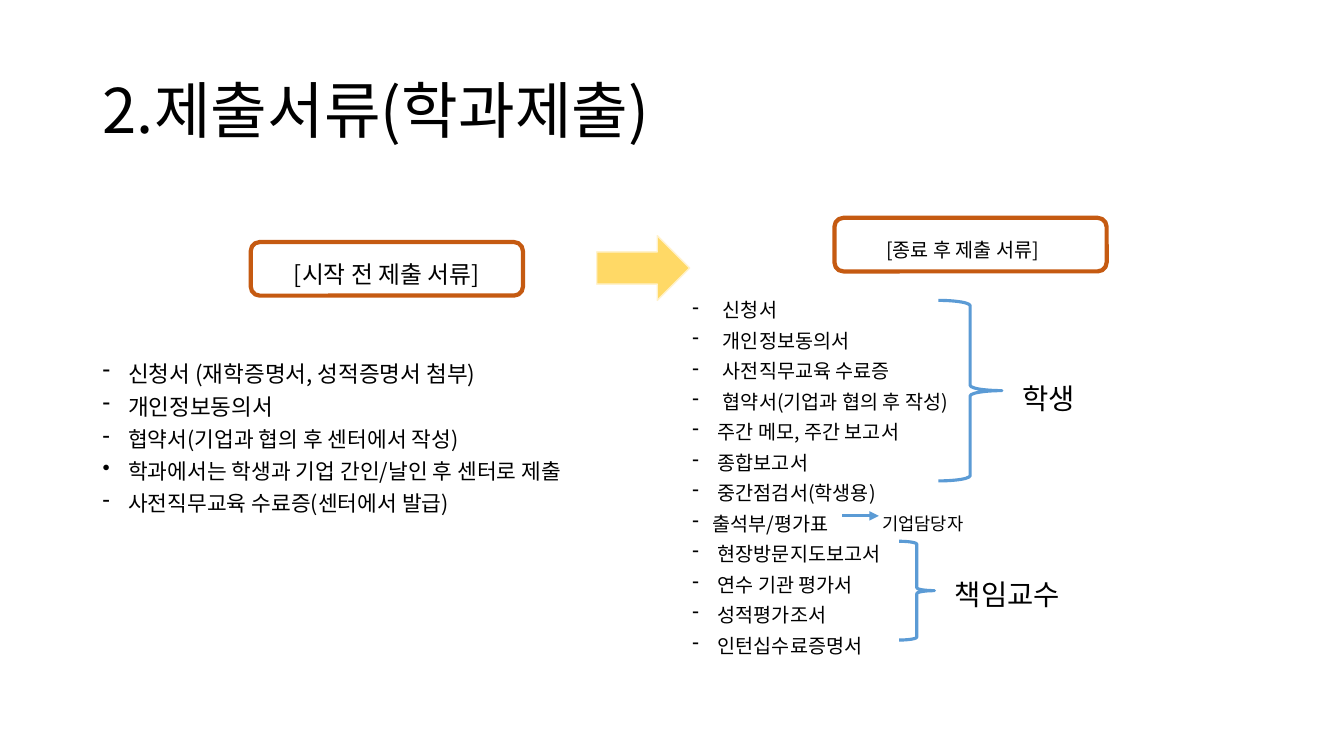
from lxml.etree import SubElement
from pptx import Presentation
from pptx.dml.color import RGBColor
from pptx.enum.shapes import MSO_CONNECTOR, MSO_SHAPE
from pptx.enum.text import MSO_ANCHOR, PP_ALIGN
from pptx.oxml.ns import qn
from pptx.util import Cm, Pt

FONT = "Noto Sans CJK KR"
BLACK = RGBColor(0x00, 0x00, 0x00)
ORANGE = RGBColor(0xC5, 0x5A, 0x11)
BLUE = RGBColor(0x5B, 0x9B, 0xD5)
YELLOW = RGBColor(0xFF, 0xD9, 0x66)
CREAM = RGBColor(0xFF, 0xF2, 0xCC)


def write(frame, text, size, first=True, bullet=None, indent=0.64, align=PP_ALIGN.LEFT,
          spacing=1.0, before=0, anchor=MSO_ANCHOR.MIDDLE, insets=(0, 0, 0, 0)):
    """Put one formatted paragraph in a text frame; indent is in cm, insets run left to bottom."""
    frame.word_wrap = True
    frame.vertical_anchor = anchor
    frame.margin_left, frame.margin_top, frame.margin_right, frame.margin_bottom = map(Cm, insets)
    paragraph = frame.paragraphs[0] if first else frame.add_paragraph()
    if bullet:
        properties = paragraph._p.get_or_add_pPr()
        properties.set("marL", str(Cm(indent)))
        properties.set("indent", str(-Cm(indent)))
        SubElement(properties, qn("a:buFontTx"))
        SubElement(properties, qn("a:buChar")).set("char", bullet)
    paragraph.alignment = align
    paragraph.line_spacing = spacing
    paragraph.space_before = Pt(0 if first else before)
    run = paragraph.add_run()
    run.text = text
    run.font.size = Pt(size)
    run.font.color.rgb = BLACK
    run.font.name = FONT
    SubElement(run.font._element, qn("a:ea")).set("typeface", FONT)


def add_outline(kind, left, top, width, height, color, weight, fill=None):
    shape = slide.shapes.add_shape(kind, Cm(left), Cm(top), Cm(width), Cm(height))
    shape.shadow.inherit = False
    if fill is None:
        shape.fill.background()
    else:
        shape.fill.solid()
        shape.fill.fore_color.rgb = fill
    shape.line.color.rgb = color
    shape.line.width = Pt(weight)
    return shape


presentation = Presentation()
presentation.slide_width = Cm(33.87)
presentation.slide_height = Cm(19.05)
slide = presentation.slides.add_slide(presentation.slide_layouts[5])

title = slide.shapes.title
title.left, title.top, title.width, title.height = Cm(2.34), Cm(1.02), Cm(29.21), Cm(3.68)
write(title.text_frame, "2.제출서류(학과제출)", 44, spacing=0.9, insets=(0.25, 0.13, 0.25, 0.13))

# Document lists: text, size, bullet, indent
before_start = [
    ("신청서 (재학증명서, 성적증명서 첨부)", 16.1, "-", 0.64),
    ("개인정보동의서", 16.1, "-", 0.64),
    ("협약서(기업과 협의 후 센터에서 작성)", 15.3, "-", 0.64),
    ("학과에서는 학생과 기업 간인/날인 후 센터로 제출", 15.3, "•", 0.64),
    ("사전직무교육 수료증(센터에서 발급)", 15.3, "-", 0.64),
]
after_end = [
    ("신청서", 14, "-", 0.77),
    ("개인정보동의서", 14, "-", 0.77),
    ("사전직무교육 수료증", 14, "-", 0.77),
    ("협약서(기업과 협의 후 작성)", 14, "-", 0.77),
    ("주간 메모, 주간 보고서", 14, "-", 0.64),
    ("종합보고서", 14, "-", 0.64),
    ("중간점검서(학생용)", 14, "-", 0.64),
    ("출석부/평가표", 14, "-", 0.5),
    ("현장방문지도보고서", 14, "-", 0.64),
    ("연수 기관 평가서", 14, "-", 0.64),
    ("성적평가조서", 14, "-", 0.64),
    ("인턴십수료증명서", 14, "-", 0.64),
]
for documents, left, top, width, height in [
    (before_start, 2.59, 9.25, 14.3, 4.2),
    (after_end, 17.45, 7.68, 13.8, 9.3),
]:
    box = slide.shapes.add_textbox(Cm(left), Cm(top), Cm(width), Cm(height))
    for number, (text, size, bullet, indent) in enumerate(documents):
        write(box.text_frame, text, size, first=number == 0, bullet=bullet, indent=indent,
              spacing=0.7, before=10, anchor=MSO_ANCHOR.TOP)

# Headings and the step arrow between them
for text, size, left, top, right_inset in [
    ("[시작 전 제출 서류]", 17, 6.32, 6.1, 0),
    ("[종료 후 제출 서류]", 14, 21.03, 5.49, 0.4),
]:
    heading = add_outline(MSO_SHAPE.ROUNDED_RECTANGLE, left, top, 6.86, 1.35, ORANGE, 3)
    write(heading.text_frame, text, size, align=PP_ALIGN.CENTER, insets=(0, 0.26, right_inset, 0))
add_outline(MSO_SHAPE.RIGHT_ARROW, 15.04, 5.94, 2.34, 1.63, CREAM, 1, fill=YELLOW)

# Who submits what
add_outline(MSO_SHAPE.RIGHT_BRACE, 23.65, 7.57, 1.6, 4.55, BLUE, 2.25)
add_outline(MSO_SHAPE.RIGHT_BRACE, 22.66, 13.64, 0.89, 2.49, BLUE, 2.25)
for text, size, left, top, width, height, align in [
    ("학생", 20.4, 23.77, 9.52, 5.31, 1.04, PP_ALIGN.CENTER),
    ("책임교수", 20.4, 22.73, 14.46, 5.31, 1.04, PP_ALIGN.CENTER),
    ("기업담당자", 12.6, 22.23, 12.8, 3, 0.8, PP_ALIGN.LEFT),
]:
    label = slide.shapes.add_textbox(Cm(left), Cm(top), Cm(width), Cm(height))
    write(label.text_frame, text, size, align=align)

arrow = slide.shapes.add_connector(MSO_CONNECTOR.STRAIGHT, Cm(21.23), Cm(13), Cm(22.15), Cm(13))
arrow.line.color.rgb = BLUE
arrow.line.width = Pt(2.25)
SubElement(arrow.line._get_or_add_ln(), qn("a:tailEnd")).set("type", "triangle")
SubElement(arrow._element.spPr, qn("a:effectLst"))

presentation.save("out.pptx")
